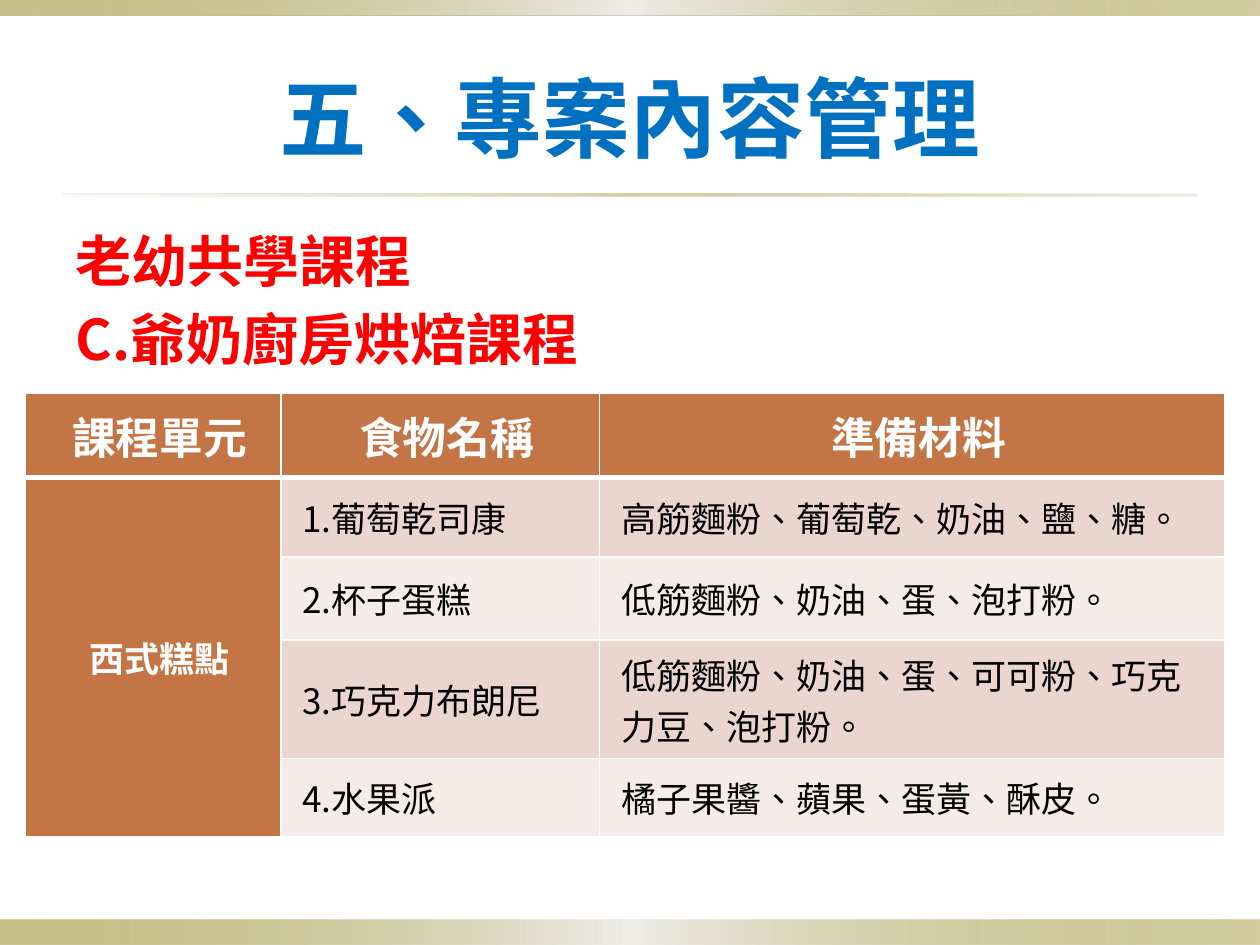
import pptx
import pptx.util
import pptx.dml.color
import pptx.enum.shapes
import pptx.enum.text
import pptx.oxml
import pptx.oxml.ns

Inches, Pt = pptx.util.Inches, pptx.util.Pt
ALIGN = pptx.enum.text.PP_ALIGN
MIDDLE = pptx.enum.text.MSO_ANCHOR.MIDDLE
FONT = "Noto Sans CJK SC"
NS = pptx.oxml.ns.nsdecls("a")
BAR = [(0, "918415", 50), (50, "EEEDE8", 100), (100, "918415", 40)]
RULE = [(0, "DCD9CC", 20), (50, "918415", 40), (100, "DCD9CC", 50)]
HEADS = ["課程單元", "食物名稱", "準備材料"]
FOODS = [
    ("1.葡萄乾司康", "高筋麵粉、葡萄乾、奶油、鹽、糖。"),
    ("2.杯子蛋糕", "低筋麵粉、奶油、蛋、泡打粉。"),
    ("3.巧克力布朗尼", "低筋麵粉、奶油、蛋、可可粉、巧克力豆、泡打粉。"),
    ("4.水果派", "橘子果醬、蘋果、蛋黃、酥皮。"),
]


def rgb(color):
    """Return the colour for a hex string."""
    return pptx.dml.color.RGBColor.from_string(color)


def set_all(obj, values):
    """Set each attribute named in a dict."""
    for name, value in values.items():
        setattr(obj, name, value)


def write(p, text, size, color, bold, **layout):
    """Put one formatted Traditional Chinese run into a paragraph."""
    r = p.add_run()
    r.text = text
    set_all(r.font, {"name": FONT, "size": Pt(size), "bold": bold})
    r.font.color.rgb = rgb(color)
    rPr = r.font._element
    rPr.set("lang", "zh-TW")
    ea = pptx.oxml.parse_xml(f'<a:ea {NS} typeface="{FONT}"/>')
    rPr.find(pptx.oxml.ns.qn("a:latin")).addnext(ea)
    set_all(p, layout)


def add_band(s, box, stops):
    """Draw a borderless bar with a horizontal gradient."""
    sp = s.shapes.add_shape(pptx.enum.shapes.MSO_SHAPE.RECTANGLE, *map(Inches, box))
    sp.shadow.inherit = False
    sp.line.fill.background()
    marks = "".join(
        f'<a:gs pos="{pos * 1000}"><a:srgbClr val="{color}"><a:alpha val="{alpha * 1000}"/>'
        f"</a:srgbClr></a:gs>" for pos, color, alpha in stops)
    grad = pptx.oxml.parse_xml(
        f'<a:gradFill {NS}><a:gsLst>{marks}</a:gsLst><a:lin ang="0" scaled="0"/></a:gradFill>')
    sp._element.spPr.find(pptx.oxml.ns.qn("a:prstGeom")).addnext(grad)


def add_title(s, box):
    """Place and fill the title placeholder."""
    sp = s.shapes.title
    set_all(sp, dict(zip(("left", "top", "width", "height"), map(Inches, box))))
    tf = sp.text_frame
    tf.vertical_anchor = MIDDLE
    write(tf.paragraphs[0], "五、專案內容管理", 50, "0070C0", True, alignment=ALIGN.CENTER)


def add_heading(s, box):
    """Write the two red heading lines."""
    tf = s.shapes.add_textbox(*map(Inches, box)).text_frame
    tf.word_wrap = True
    fmt = {"size": 32, "color": "FF0000", "bold": True}
    write(tf.paragraphs[0], "老幼共學課程", **fmt)
    write(tf.add_paragraph(), "C.爺奶廚房烘焙課程", space_before=Pt(6), **fmt)


def fill_cell(cell, text, fill, size=20, color="000000", bold=False, align=ALIGN.LEFT, bottom=1):
    """Write, fill and border one table cell."""
    margins = ("margin_left", "margin_right", "margin_top", "margin_bottom")
    set_all(cell, dict.fromkeys(margins, Inches(0.07)))
    cell.vertical_anchor = MIDDLE
    p = cell.text_frame.paragraphs[0]
    if text:
        write(p, text, size, color, bold, alignment=align,
              space_before=Pt(12), space_after=Pt(12))
        p._p.get_or_add_pPr().set("marL", str(Inches(0.1)))
    cell.fill.solid()
    cell.fill.fore_color.rgb = rgb(fill)
    tcPr = cell._tc.get_or_add_tcPr()
    for i, (side, width) in enumerate({"L": 1, "R": 1, "T": 1, "B": bottom}.items()):
        tcPr.insert(i, pptx.oxml.parse_xml(
            f'<a:ln{side} {NS} w="{Pt(width)}"><a:solidFill><a:srgbClr val="FFFFFF"/>'
            f"</a:solidFill></a:ln{side}>"))


def add_course_table(s, box, widths, heights):
    """Build the table of foods and their ingredients."""
    table = s.shapes.add_table(len(heights), len(widths), *map(Inches, box)).table
    for col, width in zip(table.columns, widths):
        col.width = Inches(width)
    for row, height in zip(table.rows, heights):
        row.height = Inches(height)
    head = {"fill": "C47546", "color": "FFFFFF", "bold": True, "align": ALIGN.CENTER}
    for j, text in enumerate(HEADS):
        fill_cell(table.cell(0, j), text, size=25, bottom=3, **head)
    for i, foods in enumerate(FOODS, 1):
        fill_cell(table.cell(i, 0), "西式糕點" if i == 1 else "", **head)
        for j, text in enumerate(foods, 1):
            fill_cell(table.cell(i, j), text, "EAD6CF" if i % 2 else "F5ECE9")
    table.cell(1, 0).merge(table.cell(len(FOODS), 0))


def main():
    """Build and save the slide."""
    prs = pptx.Presentation()
    prs.slide_width, prs.slide_height = Inches(10), Inches(7.5)
    s = prs.slides.add_slide(prs.slide_layouts[5])
    add_band(s, (0, 7.3, 10, 0.2), BAR)
    add_band(s, (0, 0, 10, 0.12), BAR)
    add_band(s, (0.5, 1.54, 9, 0.02), RULE)
    add_title(s, (0.5, 0.3, 9, 1.25))
    add_heading(s, (0.5, 1.75, 9, 1.3))
    add_course_table(s, (0.2, 3.12, 9.52, 3.52), (2.03, 2.53, 4.96),
                     (0.67, 0.63, 0.66, 0.94, 0.62))
    prs.save("out.pptx")


if __name__ == "__main__":
    main()
